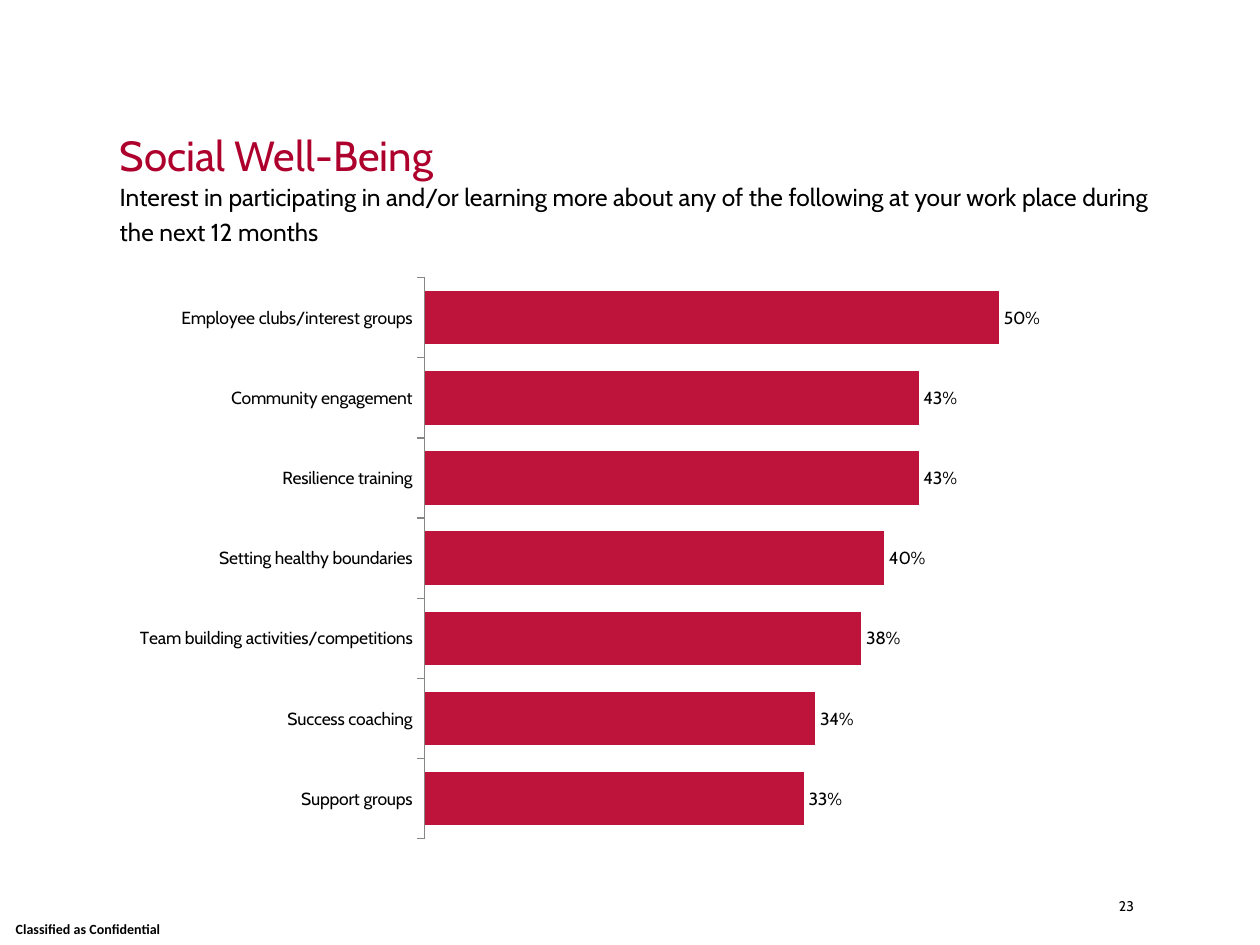
import pptx
import pptx.util
import pptx.chart.data
import pptx.dml.color
import pptx.enum.chart
import pptx.enum.text

Pt = pptx.util.Pt
ALIGN = pptx.enum.text.PP_ALIGN
ANCHOR = pptx.enum.text.MSO_ANCHOR

THEME = {
    "font": "Cabin", "label_font": "Calibri",
    "title": "AE002C", "text": "000000", "bar": "BE143C", "axis": "868686",
    "title_size": 24, "question_size": 14, "chart_size": 10, "small_size": 8,
}

TITLE = "Social Well-Being"
QUESTION = ("Interest in participating in and/or learning more about any of the "
            "following at your work place during the next 12 months")
CLASSIFICATION = "Classified as Confidential"
PAGE = "23"
INTEREST = [
    ("Employee clubs/interest groups", 0.50),
    ("Community engagement", 0.43),
    ("Resilience training", 0.43),
    ("Setting healthy boundaries", 0.40),
    ("Team building activities/competitions", 0.38),
    ("Success coaching", 0.34),
    ("Support groups", 0.33),
]

SLIDE_WIDTH, SLIDE_HEIGHT = 720, 540
LEFT, RIGHT = 68.4, 648


def color(role):
    return pptx.dml.color.RGBColor.from_string(THEME[role])


def apply(target, formats):
    for name, value in formats.items():
        setattr(target, name, value)


def place(part, left, top, width, height):
    apply(part, {"left": Pt(left), "top": Pt(top), "width": Pt(width), "height": Pt(height)})


def style_font(font, size, role="text", face="font", bold=False):
    apply(font, {"name": THEME[face], "size": Pt(THEME[size]), "bold": bold})
    font.color.rgb = color(role)


def write(part, text, size, role="text", face="font", bold=False,
          anchor=ANCHOR.TOP, **paragraph_format):
    frame = part.text_frame
    apply(frame, {"word_wrap": True, "auto_size": pptx.enum.text.MSO_AUTO_SIZE.NONE,
                  "vertical_anchor": anchor, "margin_left": 0, "margin_right": 0,
                  "margin_top": 0, "margin_bottom": 0})
    paragraph = frame.paragraphs[0]
    apply(paragraph, {"alignment": ALIGN.LEFT, **paragraph_format})
    run = paragraph.add_run()
    run.text = text
    style_font(run.font, size, role, face, bold)


def add_interest_chart(slide):
    interest = pptx.chart.data.CategoryChartData(number_format="0%")
    labels, shares = zip(*reversed(INTEREST))
    interest.categories = labels
    interest.add_series("Series 1", shares)
    chart = slide.shapes.add_chart(
        pptx.enum.chart.XL_CHART_TYPE.BAR_CLUSTERED,
        Pt(LEFT), Pt(152), Pt(RIGHT - LEFT), Pt(334), interest).chart
    apply(chart, {"has_legend": False, "has_title": False})
    style_font(chart.font, "chart_size")

    apply(chart.value_axis, {"visible": False, "has_major_gridlines": False,
                             "minimum_scale": 0, "maximum_scale": 0.6})
    categories = chart.category_axis
    apply(categories, {"has_major_gridlines": False,
                       "major_tick_mark": pptx.enum.chart.XL_TICK_MARK.OUTSIDE})
    categories.format.line.color.rgb = color("axis")
    categories.format.line.width = Pt(0.75)

    plot = chart.plots[0]
    apply(plot, {"gap_width": 50, "vary_by_categories": False, "has_data_labels": True})
    apply(plot.data_labels, {
        "show_value": True, "number_format": "0%", "number_format_is_linked": False,
        "position": pptx.enum.chart.XL_LABEL_POSITION.OUTSIDE_END})
    style_font(plot.data_labels.font, "chart_size")
    bars = plot.series[0]
    bars.invert_if_negative = False
    bars.format.fill.solid()
    bars.format.fill.fore_color.rgb = color("bar")


def main():
    deck = pptx.Presentation()
    apply(deck, {"slide_width": Pt(SLIDE_WIDTH), "slide_height": Pt(SLIDE_HEIGHT)})
    slide = deck.slides.add_slide(deck.slide_layouts.get_by_name("Title Only"))

    title = slide.shapes.title
    place(title, LEFT, 49, 576, 54)
    write(title, TITLE, "title_size", "title", anchor=ANCHOR.BOTTOM, line_spacing=0.9)

    def add_text(box, *args, **formats):
        write(slide.shapes.add_textbox(*map(Pt, box)), *args, **formats)

    add_text((LEFT, 100.8, 608.4, 21.6), QUESTION, "question_size",
             line_spacing=1.2, space_before=Pt(9), space_after=Pt(9))
    add_interest_chart(slide)
    add_text((RIGHT - 35, 512.6, 35, 27.4), PAGE, "small_size", alignment=ALIGN.RIGHT)
    add_text((0, 522, 100.8, 18), CLASSIFICATION, "small_size", face="label_font",
             bold=True, anchor=ANCHOR.MIDDLE, alignment=ALIGN.CENTER)
    deck.save("out.pptx")


if __name__ == "__main__":
    main()
